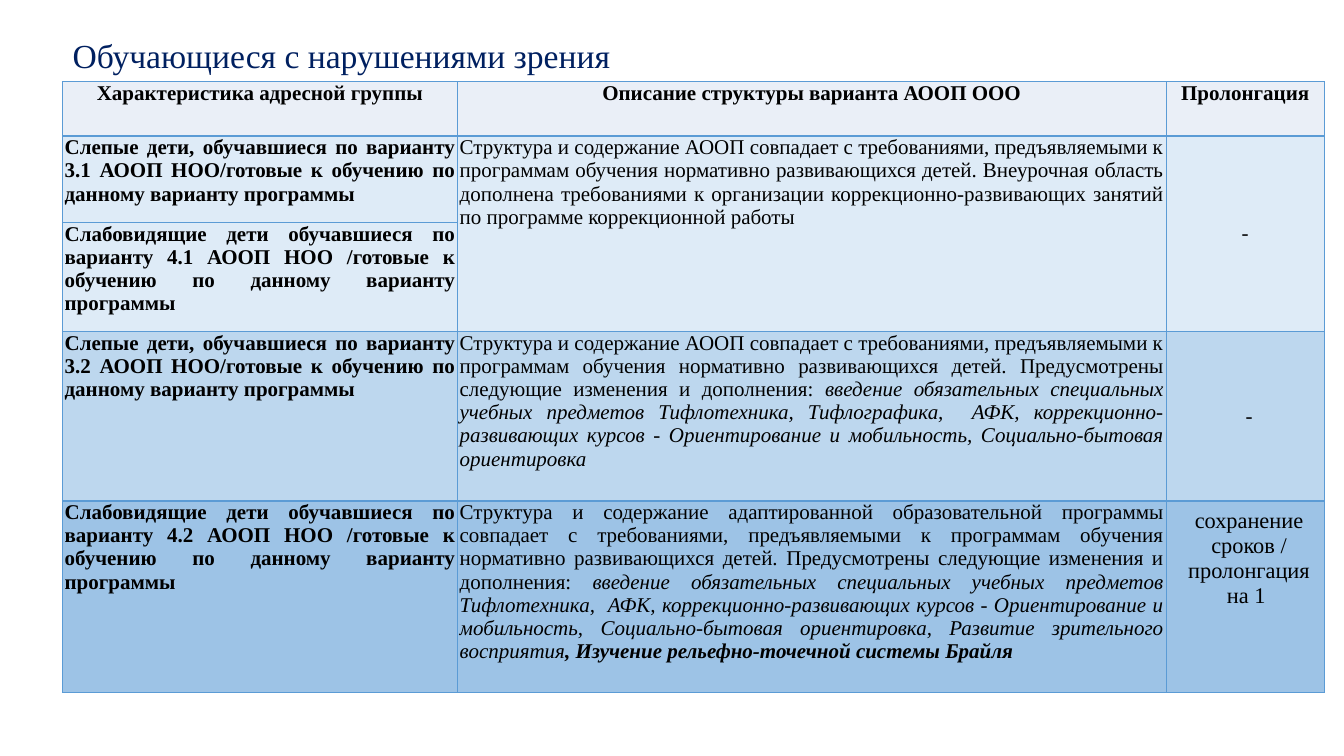
from pptx import Presentation
from pptx.dml.color import RGBColor
from pptx.enum.text import MSO_ANCHOR as ANCHOR, PP_ALIGN as ALIGN
from pptx.oxml import parse_xml
from pptx.oxml.ns import nsdecls
from pptx.util import Pt

FONT = "Times New Roman"
NAVY = RGBColor(0x00, 0x20, 0x60)
BLACK = RGBColor(0x00, 0x00, 0x00)
LINE = RGBColor(0x5B, 0x9B, 0xD5)
HEAD = RGBColor(0xEA, 0xEF, 0xF7)
PALE = RGBColor(0xDE, 0xEB, 0xF7)
LIGHT = RGBColor(0xBD, 0xD7, 0xEE)
MEDIUM = RGBColor(0x9D, 0xC3, 0xE6)

COL_WIDTHS = [282.2, 506.2, 113]
ROW_HEIGHTS = [38.9, 61.9, 77.8, 121, 136.8]
ROW_FILLS = [HEAD, PALE, PALE, LIGHT, MEDIUM]

# Each cell is a list of (text, style) runs: b is bold, i is italic
ROWS = [
    [[("Характеристика адресной группы", "b")],
     [("Описание структуры варианта АООП ООО", "b")],
     [("Пролонгация", "b")]],
    [[("Слепые дети, обучавшиеся по варианту 3.1 АООП НОО/готовые к обучению "
       "по данному варианту программы", "b")],
     [("Структура и содержание АООП совпадает с требованиями, предъявляемыми к "
       "программам обучения нормативно развивающихся детей. Внеурочная область "
       "дополнена требованиями к организации коррекционно-развивающих занятий "
       "по программе коррекционной работы", "")],
     [("-", "")]],
    [[("Слабовидящие дети обучавшиеся по варианту 4.1 АООП НОО /готовые к "
       "обучению по данному варианту программы ", "b")],
     [], []],
    [[("Слепые дети, обучавшиеся по варианту 3.2 АООП НОО/готовые к обучению "
       "по данному варианту программы", "b")],
     [("Структура и содержание АООП совпадает с требованиями, предъявляемыми к "
       "программам обучения нормативно развивающихся детей. Предусмотрены "
       "следующие изменения и дополнения: ", ""),
      ("введение обязательных специальных учебных предметов Тифлотехника, "
       "Тифлографика,  АФК, коррекционно-развивающих курсов - Ориентирование и "
       "мобильность, Социально-бытовая ориентировка", "i")],
     [("-", "")]],
    [[("Слабовидящие дети обучавшиеся по варианту 4.2 АООП НОО /готовые к "
       "обучению по данному варианту программы ", "b")],
     [("Структура и содержание адаптированной образовательной программы "
       "совпадает с требованиями, предъявляемыми к программам обучения "
       "нормативно развивающихся детей. Предусмотрены следующие изменения и "
       "дополнения: ", ""),
      ("введение обязательных специальных учебных предметов Тифлотехника,  АФК, "
       "коррекционно-развивающих курсов - Ориентирование и мобильность, "
       "Социально-бытовая ориентировка, Развитие зрительного восприятия", "i"),
      (", Изучение рельефно-точечной системы Брайля ", "bi")],
     [("сохранение сроков / пролонгация на 1 ", "")]],
]


def add_run(p, text, size, color, style=""):
    r = p.add_run()
    r.text = text
    r.font.name = FONT
    r.font.size = Pt(size)
    r.font.color.rgb = color
    r.font.bold = "b" in style
    r.font.italic = "i" in style


def add_borders(cell):
    for side in ("lnL", "lnR", "lnT", "lnB"):
        cell._tc.get_or_add_tcPr().append(parse_xml(
            f'<a:{side} {nsdecls("a")} w="{Pt(1)}"><a:solidFill>'
            f'<a:srgbClr val="{LINE}"/></a:solidFill></a:{side}>'))


prs = Presentation()
prs.slide_width, prs.slide_height = Pt(960), Pt(540)
s = prs.slides.add_slide(prs.slide_layouts[5])

# Title
title = s.shapes.title
title.left, title.top, title.width, title.height = Pt(44.6), Pt(-10.8), Pt(828), Pt(104.4)
tf = title.text_frame
tf.word_wrap = True
tf.vertical_anchor = ANCHOR.MIDDLE
p = tf.paragraphs[0]
p.alignment = ALIGN.LEFT
p.line_spacing = 0.9
add_run(p, "Обучающиеся с нарушениями зрения", 24, NAVY)

# Table grid
table = s.shapes.add_table(len(ROWS), len(COL_WIDTHS), Pt(44.6), Pt(58.3),
                           Pt(sum(COL_WIDTHS)), Pt(sum(ROW_HEIGHTS))).table
table.horz_banding = False
for column, width in zip(table.columns, COL_WIDTHS):
    column.width = Pt(width)
for row, height in zip(table.rows, ROW_HEIGHTS):
    row.height = Pt(height)

# Table cells
for i, row in enumerate(ROWS):
    for j, runs in enumerate(row):
        cell = table.cell(i, j)
        add_borders(cell)
        cell.fill.solid()
        cell.fill.fore_color.rgb = ROW_FILLS[i]
        padded = j == 2 and i >= 3
        cell.margin_left = Pt(10.8 if padded else 1.6)
        cell.margin_right = Pt(5.4 if padded else 1.6)
        cell.margin_top = cell.margin_bottom = Pt(5.4 if padded else 0)
        cell.vertical_anchor = ANCHOR.MIDDLE if j == 2 and i in (1, 3) else ANCHOR.TOP
        p = cell.text_frame.paragraphs[0]
        p.alignment = ALIGN.CENTER if i == 0 or j == 2 else ALIGN.JUSTIFY
        size = 16 if j == 2 and i == 4 else 15
        for text, style in runs:
            add_run(p, text, size, BLACK, style)

# Description and prolongation are shared by the first two groups
for j in (1, 2):
    table.cell(1, j).merge(table.cell(2, j))

prs.save("out.pptx")
